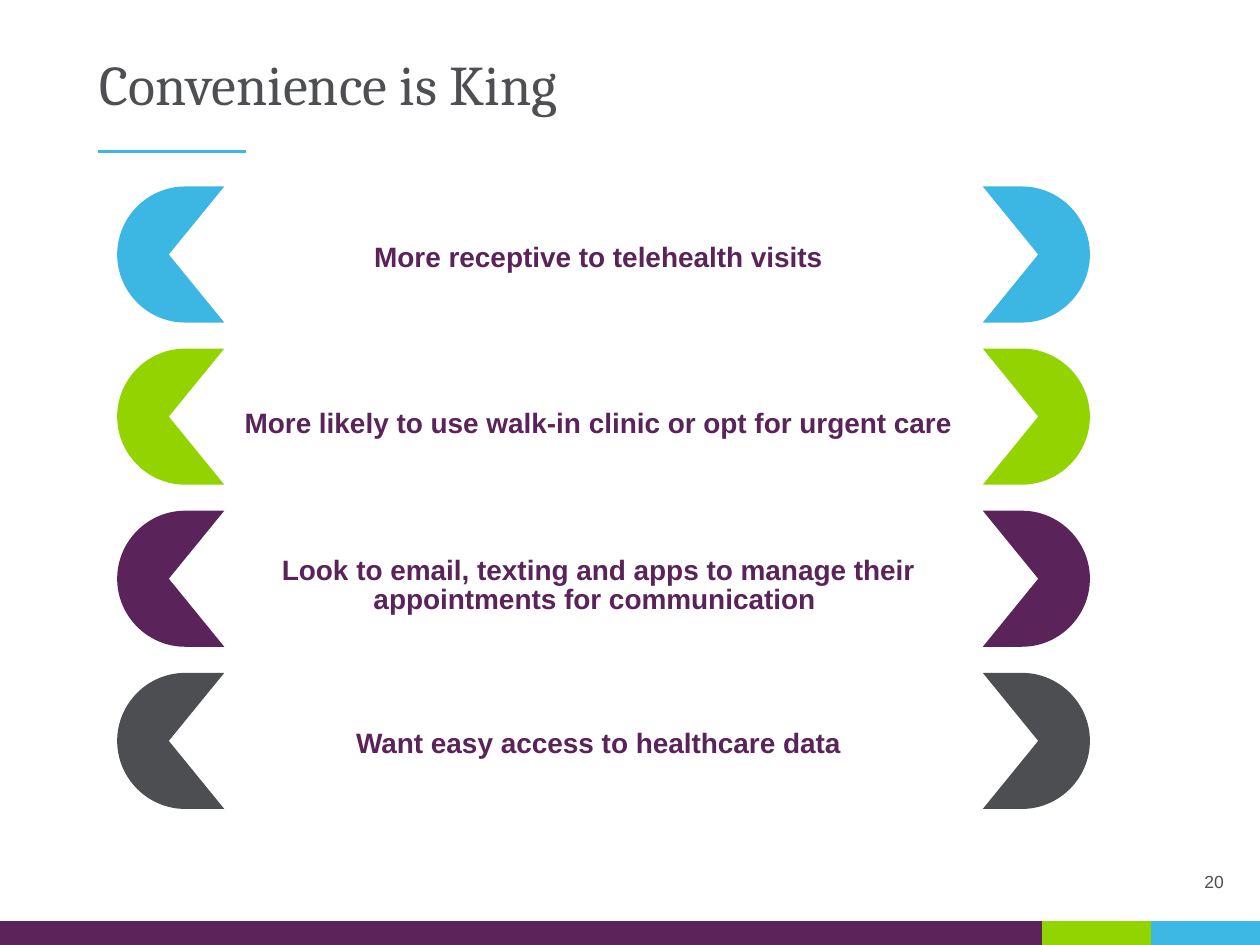
from lxml import etree
from pptx import Presentation
from pptx.dml.color import RGBColor
from pptx.enum.shapes import MSO_CONNECTOR, MSO_SHAPE
from pptx.enum.text import MSO_ANCHOR, PP_ALIGN
from pptx.oxml.ns import qn
from pptx.util import Inches, Pt

COLORS = {
    "blue": "3CB7E3",
    "green": "92D300",
    "purple": "5A235A",
    "gray": "4D4E52",
    "text_gray": "4D4F53",
    "bar_purple": "5A245A",
    "bar_green": "92D400",
    "bar_blue": "3DB7E4",
}

# Statement, bracket colour, top and height of the text relative to the row
ROWS = [
    ("More receptive to telehealth visits", "blue", 0.43, 0.28),
    ("More likely to use walk-in clinic or opt for urgent care",
     "green", 0.46, 0.28),
    ("Look to email, texting and apps to manage their "
     "appointments for communication ", "purple", 0.34, 0.51),
    ("Want easy access to healthcare data", "gray", 0.43, 0.28),
]
ROW_HEIGHT = 1.08
BRACKET_WIDTH = 0.85
NOTCH_DEPTH = 0.44
CURVE_HANDLE = 0.55  # share of the radius that rounds a quarter circle

TITLE = {"name": "Cambria", "size": Pt(32), "color": "text_gray"}
STATEMENT = {"name": "Arial", "size": Pt(16), "bold": True, "color": "purple"}
PAGE_NUMBER = {"name": "Arial", "size": Pt(10), "color": "text_gray"}


def rgb(color):
    return RGBColor.from_string(COLORS[color])


def paint(shape, color):
    """Give the shape a flat fill without outline or shadow."""
    shape.fill.solid()
    shape.fill.fore_color.rgb = rgb(color)
    shape.line.fill.background()
    shape.shadow.inherit = False


def add_text(slide, box, text, font_format, paragraph_format, frame_format):
    text_box = slide.shapes.add_textbox(*map(Inches, box))
    frame = text_box.text_frame
    frame.word_wrap = True
    for name, value in frame_format.items():
        setattr(frame, name, value)
    paragraph = frame.paragraphs[0]
    paragraph.text = text
    for name, value in paragraph_format.items():
        setattr(paragraph, name, value)
    font = paragraph.runs[0].font
    for name, value in font_format.items():
        if name == "color":
            font.color.rgb = rgb(value)
        else:
            setattr(font, name, value)


def merge_into_curve(segments):
    """Turn three line segments into one cubic curve through their points."""
    curve = etree.Element(qn("a:cubicBezTo"))
    segments[0].addprevious(curve)
    for segment in segments:
        curve.append(segment[0])
        segment.getparent().remove(segment)


def add_bracket(slide, open_x, top, direction, color):
    """Draw a notched half-round; direction is -1 or 1 from the open side."""
    radius = ROW_HEIGHT / 2
    straight = BRACKET_WIDTH - radius
    handle = radius * CURVE_HANDLE
    outline = [
        (straight, 0),
        (straight + handle, 0),
        (BRACKET_WIDTH, radius - handle),
        (BRACKET_WIDTH, radius),
        (BRACKET_WIDTH, radius + handle),
        (straight + handle, ROW_HEIGHT),
        (straight, ROW_HEIGHT),
        (0, ROW_HEIGHT),
        (NOTCH_DEPTH, radius),
    ]
    points = [(Inches(open_x + direction * x), Inches(top + y))
              for x, y in outline]
    builder = slide.shapes.build_freeform(Inches(open_x), Inches(top))
    builder.add_line_segments(points, close=True)
    bracket = builder.convert_to_shape()
    segments = list(bracket._element.iter(qn("a:lnTo")))
    for first in (1, 4):
        merge_into_curve(segments[first:first + 3])
    paint(bracket, color)


def add_header(slide, left, top, width, height):
    add_text(slide, (left, top, width, height), "Convenience is King",
             TITLE, {"line_spacing": 0.9}, {})
    line_left, line_y = left + 0.09, top + 0.8
    line = slide.shapes.add_connector(
        MSO_CONNECTOR.STRAIGHT, Inches(line_left), Inches(line_y),
        Inches(line_left + 1.17), Inches(line_y))
    line.line.color.rgb = rgb("blue")
    line.line.width = Pt(1.5)
    etree.SubElement(line._element.spPr, qn("a:effectLst"))


def add_statement_row(slide, left, top, width, row):
    statement, color, text_top, text_height = row
    add_bracket(slide, left + BRACKET_WIDTH, top, -1, color)
    add_bracket(slide, left + width - BRACKET_WIDTH, top, 1, color)
    add_text(slide, (left + 0.77, top + text_top, 6.1, text_height),
             statement, STATEMENT,
             {"alignment": PP_ALIGN.CENTER, "line_spacing": Pt(16.9)},
             {"vertical_anchor": MSO_ANCHOR.MIDDLE,
              "margin_left": Inches(0.04), "margin_right": Inches(0.04),
              "margin_top": Inches(0.02), "margin_bottom": Inches(0.02)})


def add_statements(slide, left, top, width, height):
    pitch = (height - ROW_HEIGHT) / (len(ROWS) - 1)
    for index, row in enumerate(ROWS):
        add_statement_row(slide, left, top + index * pitch, width, row)


def add_footer(slide, left, top, width, height):
    add_text(slide, (left + 1.19, top - 0.45, 8.62, 0.27), "20", PAGE_NUMBER,
             {"alignment": PP_ALIGN.RIGHT, "line_spacing": 0.9},
             {"vertical_anchor": MSO_ANCHOR.BOTTOM})
    main_width = 8.27
    accent_width = (width - main_width) / 2
    bands = [("bar_purple", main_width),
             ("bar_green", accent_width), ("bar_blue", accent_width)]
    for color, band_width in bands:
        band = slide.shapes.add_shape(
            MSO_SHAPE.RECTANGLE, Inches(left), Inches(top),
            Inches(band_width), Inches(height))
        paint(band, color)
        left += band_width


def main():
    presentation = Presentation()
    presentation.slide_width = Inches(10)
    presentation.slide_height = Inches(7.5)
    slide = presentation.slides.add_slide(presentation.slide_layouts[6])
    add_footer(slide, 0, 7.31, 10, 0.19)
    add_statements(slide, 0.93, 1.48, 7.72, 4.94)
    add_header(slide, 0.69, 0.4, 8.62, 0.62)
    presentation.save("out.pptx")


if __name__ == "__main__":
    main()
